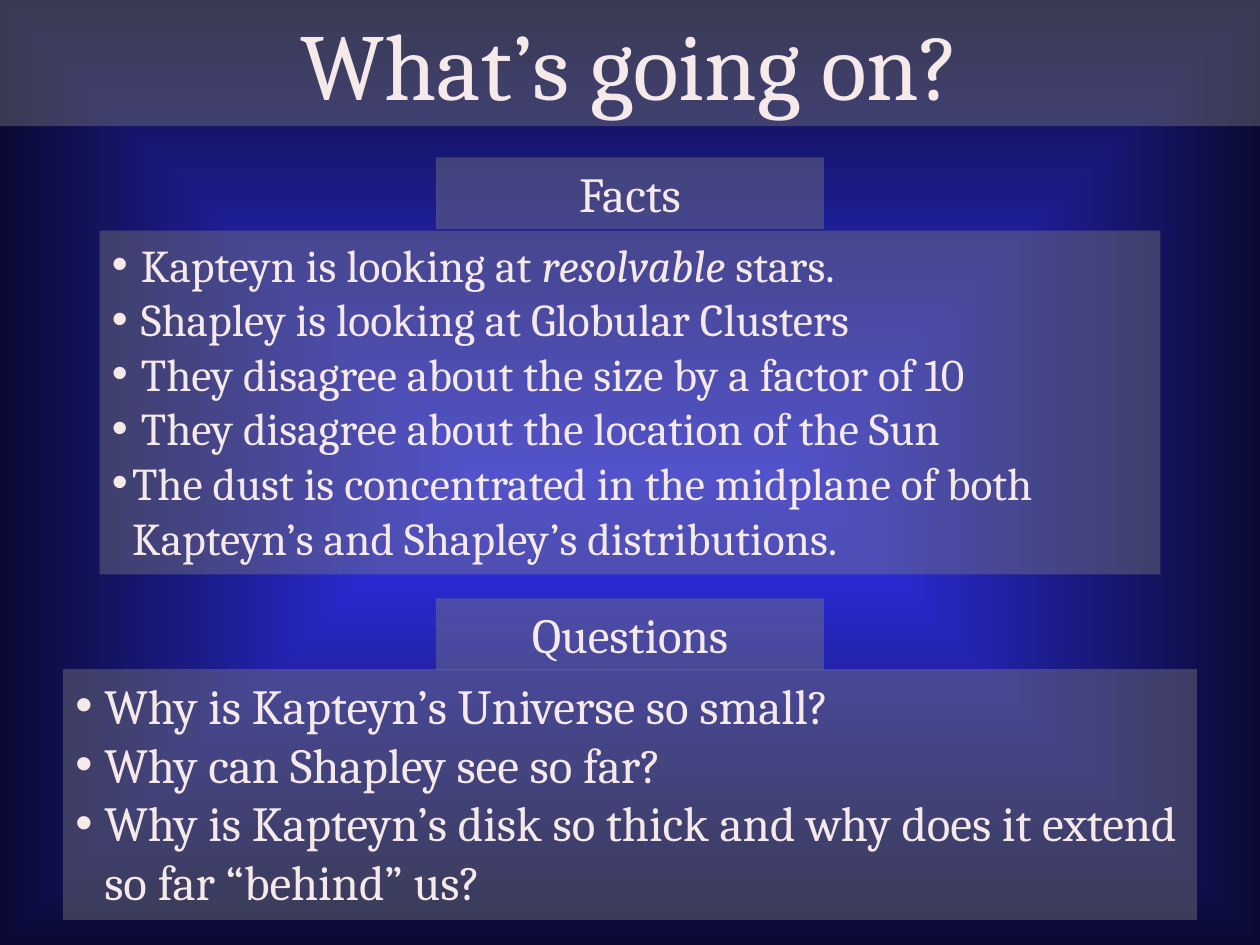
from dataclasses import dataclass

from lxml.etree import SubElement
from pptx import Presentation
from pptx.dml.color import RGBColor
from pptx.enum.shapes import MSO_SHAPE
from pptx.enum.text import MSO_ANCHOR, MSO_AUTO_SIZE, PP_ALIGN
from pptx.oxml import parse_xml
from pptx.oxml.ns import nsdecls, qn
from pptx.util import Inches, Pt


@dataclass(frozen=True)
class Theme:
    font: str = "Cambria"
    ink: str = "F5E9E9"
    panel: str = "808080"
    alpha: int = 41
    glow: str = "3333FF"
    edge: str = "0A0A34"
    title: int = 54
    large: int = 28
    small: int = 26


@dataclass(frozen=True)
class Item:
    text: str  # asterisks enclose italic words
    hang: float = 0.23


@dataclass(frozen=True)
class Block:
    head: str
    top: float
    body: float
    width: float
    height: float
    size: int
    items: tuple[Item, ...]


THEME = Theme()
WIDTH, HEIGHT = 10, 7.5
HEAD_WIDTH, HEAD_HEIGHT = 3.08, 0.57

BLOCKS = (
    Block("Facts", 1.25, 1.83, 8.42, 2.73, THEME.small, (
        Item("Kapteyn is looking at *resolvable* stars."),
        Item("Shapley is looking at Globular Clusters"),
        Item("They disagree about the size by a factor of 10"),
        Item("They disagree about the location of the Sun"),
        Item("The dust is concentrated in the midplane of both "
             "Kapteyn’s and Shapley’s distributions.", 0.16),
    )),
    Block("Questions", 4.75, 5.31, 9, 1.99, THEME.large, (
        Item("Why is Kapteyn’s Universe so small?"),
        Item("Why can Shapley see so far?"),
        Item("Why is Kapteyn’s disk so thick and why does it "
             "extend so far “behind” us?"),
    )),
)


def apply(target, values: dict) -> None:
    for name, value in values.items():
        setattr(target, name, value)


def paint(slide) -> None:
    """Fill the background with a glow from the centre."""
    fill = slide.background.fill
    fill.solid()
    solid = slide.background._cSld.find(".//" + qn("a:solidFill"))
    glow = parse_xml(
        f'<a:gradFill {nsdecls("a")} rotWithShape="1"><a:gsLst>'
        f'<a:gs pos="0"><a:srgbClr val="{THEME.glow}"/></a:gs>'
        f'<a:gs pos="100000"><a:srgbClr val="{THEME.edge}"/></a:gs></a:gsLst>'
        '<a:path path="shape"><a:fillToRect l="50000" t="50000" '
        'r="50000" b="50000"/></a:path></a:gradFill>')
    solid.getparent().replace(solid, glow)


def place(shape, top: float, width: float, height: float) -> None:
    """Centre a see-through panel across the slide."""
    apply(shape, {
        "left": Inches((WIDTH - width) / 2), "top": Inches(top),
        "width": Inches(width), "height": Inches(height)})
    shape.fill.solid()
    shape.fill.fore_color.rgb = RGBColor.from_string(THEME.panel)
    tint = shape.fill._xPr.find(".//" + qn("a:srgbClr"))
    SubElement(tint, qn("a:alpha"), val=str(THEME.alpha * 1000))
    shape.line.fill.background()
    apply(shape.text_frame, {
        "word_wrap": True, "vertical_anchor": MSO_ANCHOR.TOP,
        "auto_size": MSO_AUTO_SIZE.SHAPE_TO_FIT_TEXT})


def panel(slide, top: float, width: float, height: float):
    shape = slide.shapes.add_shape(MSO_SHAPE.RECTANGLE, 0, 0, 0, 0)
    shape.shadow.inherit = False
    place(shape, top, width, height)
    return shape


def style(para, size: int, align: PP_ALIGN) -> None:
    para.alignment = align
    apply(para.font, {"name": THEME.font, "size": Pt(size)})
    para.font.color.rgb = RGBColor.from_string(THEME.ink)


def label(shape, text: str, size: int) -> None:
    para = shape.text_frame.paragraphs[0]
    style(para, size, PP_ALIGN.CENTER)
    para.add_run().text = text


def bullets(shape, items: tuple[Item, ...], size: int) -> None:
    frame = shape.text_frame
    for at, item in enumerate(items):
        para = frame.add_paragraph() if at else frame.paragraphs[0]
        props = para._p.get_or_add_pPr()
        props.set("marL", str(Inches(item.hang)))
        props.set("indent", str(-Inches(item.hang)))
        SubElement(props, qn("a:buFont"), typeface="Arial")
        SubElement(props, qn("a:buChar"), char="•")
        style(para, size, PP_ALIGN.LEFT)
        for part, text in enumerate(item.text.split("*")):
            run = para.add_run()
            run.text = text
            if part % 2:
                run.font.italic = True


def main() -> None:
    deck = Presentation()
    apply(deck, {"slide_width": Inches(WIDTH), "slide_height": Inches(HEIGHT)})
    slide = deck.slides.add_slide(deck.slide_layouts[5])
    paint(slide)

    # Title band
    title = slide.shapes.title
    place(title, 0, WIDTH, 1)
    label(title, "What’s going on?", THEME.title)

    # Headed lists
    for block in BLOCKS:
        head = panel(slide, block.top, HEAD_WIDTH, HEAD_HEIGHT)
        label(head, block.head, THEME.large)
        body = panel(slide, block.body, block.width, block.height)
        bullets(body, block.items, block.size)

    deck.save("out.pptx")


if __name__ == "__main__":
    main()
